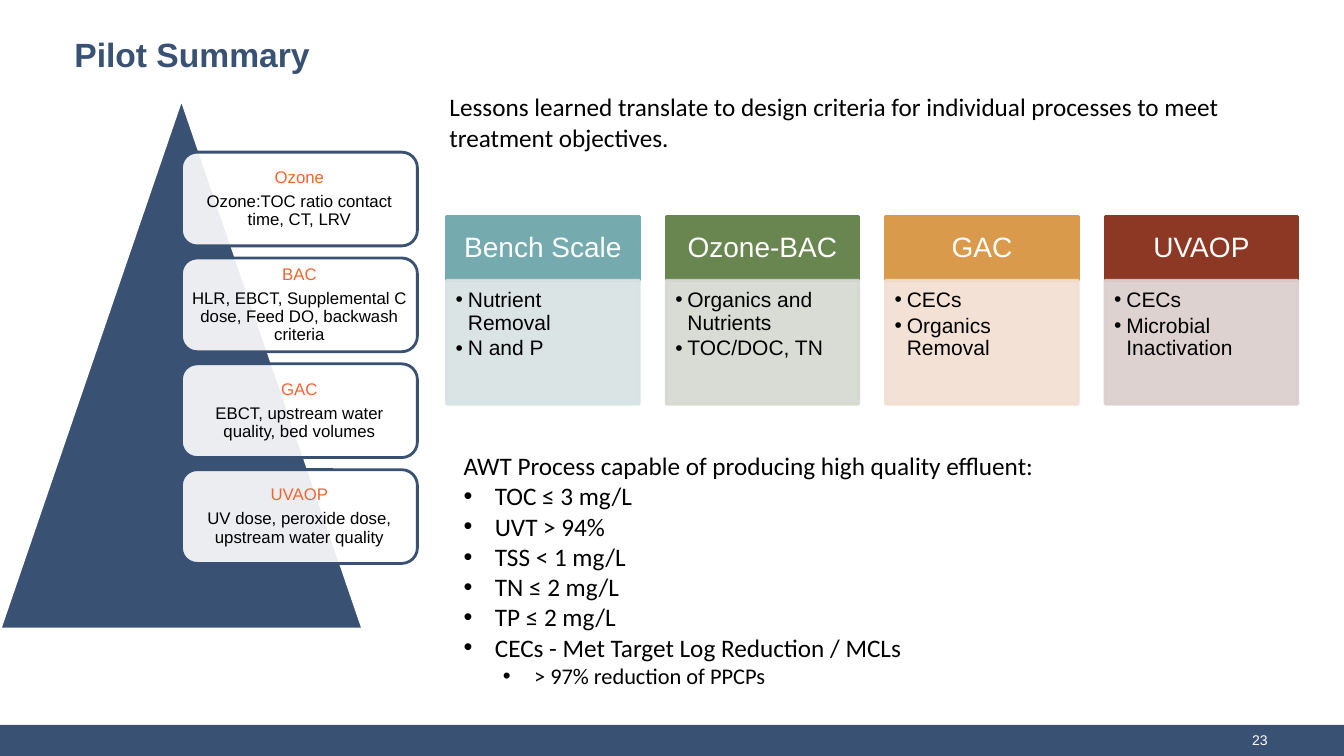
import pptx
import pptx.dml.color
import pptx.enum.shapes
import pptx.enum.text
import pptx.oxml.ns
import pptx.util
from lxml import etree

Inches = pptx.util.Inches
Pt = pptx.util.Pt
RGBColor = pptx.dml.color.RGBColor
Shape = pptx.enum.shapes.MSO_SHAPE
Align = pptx.enum.text.PP_ALIGN
Anchor = pptx.enum.text.MSO_ANCHOR
qn = pptx.oxml.ns.qn

NAVY = RGBColor(0x39, 0x51, 0x73)
ORANGE = RGBColor(0xF2, 0x65, 0x31)
WHITE = RGBColor(0xFF, 0xFF, 0xFF)
BLACK = RGBColor(0x00, 0x00, 0x00)
TEAL = RGBColor(0x75, 0xAA, 0xAF)
PALE_TEAL = RGBColor(0xD6, 0xE2, 0xE3)
GREEN = RGBColor(0x69, 0x86, 0x51)
PALE_GREEN = RGBColor(0xD4, 0xD9, 0xD0)
AMBER = RGBColor(0xD9, 0x9A, 0x4B)
PALE_AMBER = RGBColor(0xF1, 0xDE, 0xD0)
BRICK = RGBColor(0x8D, 0x38, 0x24)
PALE_BRICK = RGBColor(0xDB, 0xCE, 0xCD)

PYRAMID_STEPS = [
    ("Ozone", "Ozone:TOC ratio contact time, CT, LRV"),
    ("BAC", "HLR, EBCT, Supplemental C dose, Feed DO, backwash criteria"),
    ("GAC", "EBCT, upstream water quality, bed volumes"),
    ("UVAOP", "UV dose, peroxide dose, upstream water quality"),
]
PROCESSES = [
    ("Bench Scale", ["Nutrient Removal", "N and P"], TEAL, PALE_TEAL),
    ("Ozone-BAC", ["Organics and Nutrients", "TOC/DOC, TN"], GREEN, PALE_GREEN),
    ("GAC", ["CECs", "Organics Removal"], AMBER, PALE_AMBER),
    ("UVAOP", ["CECs", "Microbial Inactivation"], BRICK, PALE_BRICK),
]
EFFLUENT_RESULTS = [
    "TOC ≤ 3 mg/L",
    "UVT > 94%",
    "TSS < 1 mg/L",
    "TN ≤ 2 mg/L",
    "TP ≤ 2 mg/L",
    "CECs - Met Target Log Reduction / MCLs",
]


def add_bullet(para, margin, hanging):
    properties = para._p.get_or_add_pPr()
    properties.set("marL", str(Inches(margin)))
    properties.set("indent", str(-Inches(hanging)))
    etree.SubElement(properties, qn("a:buFont"), typeface="Arial")
    etree.SubElement(properties, qn("a:buChar"), char="•")


def write_text(frame, text, size, color=BLACK, font="Arial", bold=False,
               align=Align.LEFT, line_spacing=None, space_after=0,
               bullet=None, level=0):
    """Add a paragraph, using the frame's first one while it is still empty."""
    first = frame.paragraphs[0]
    para = frame.add_paragraph() if first.runs else first
    para.alignment = align
    para.level = level
    para.space_after = Pt(space_after)
    if line_spacing:
        para.line_spacing = line_spacing
    if bullet:
        add_bullet(para, *bullet)
    span = para.add_run()
    span.text = text
    span.font.size = Pt(size)
    span.font.name = font
    span.font.bold = bold
    span.font.color.rgb = color


def format_frame(frame, anchor, insets):
    frame.word_wrap = True
    frame.vertical_anchor = anchor
    (frame.margin_left, frame.margin_top,
     frame.margin_right, frame.margin_bottom) = map(Inches, insets)


def add_text_box(page, left, top, width, height, anchor=Anchor.TOP):
    box = page.shapes.add_textbox(*map(Inches, (left, top, width, height)))
    format_frame(box.text_frame, anchor, (0.1, 0.05, 0.1, 0.05))
    return box.text_frame


def add_panel(page, kind, left, top, width, height, fill, line=None,
              anchor=Anchor.MIDDLE, insets=(0.05, 0.05, 0.05, 0.05)):
    panel = page.shapes.add_shape(kind, *map(Inches, (left, top, width, height)))
    panel.shadow.inherit = False
    panel.fill.solid()
    panel.fill.fore_color.rgb = fill
    if line is None:
        panel.line.fill.background()
    else:
        panel.line.color.rgb = line
        panel.line.width = Pt(2)
    format_frame(panel.text_frame, anchor, insets)
    return panel


def set_opacity(color_parent, percent):
    for color in color_parent.iter(qn("a:srgbClr")):
        etree.SubElement(color, qn("a:alpha"), val=str(percent * 1000))


def add_pyramid(page):
    add_panel(page, Shape.ISOSCELES_TRIANGLE, 0, 0.98, 3.6, 5.26, NAVY, WHITE)
    for index, (name, criteria) in enumerate(PYRAMID_STEPS):
        step = add_panel(page, Shape.ROUNDED_RECTANGLE, 1.8, 1.51 + 1.05 * index,
                         2.34, 0.93, WHITE, NAVY)
        set_opacity(step._element.spPr.find(qn("a:solidFill")), 90)
        for text, color in ((name, ORANGE), (criteria, BLACK)):
            write_text(step.text_frame, text, 12, color, align=Align.CENTER,
                       line_spacing=0.9, space_after=4.2)


def add_process_cards(page):
    for index, (name, targets, color, pale) in enumerate(PROCESSES):
        left = 4.43 + 2.177 * index
        header = add_panel(page, Shape.RECTANGLE, left, 2.15, 1.91, 0.63, color,
                           color, insets=(0.16, 0.09, 0.16, 0.09))
        write_text(header.text_frame, name, 20, WHITE, align=Align.CENTER,
                   line_spacing=0.9, space_after=7)
        body = add_panel(page, Shape.RECTANGLE, left, 2.78, 1.91, 1.23, pale, pale,
                         anchor=Anchor.TOP, insets=(0.09, 0.09, 0.12, 0.13))
        set_opacity(body._element.spPr, 90)
        for target in targets:
            write_text(body.text_frame, target, 15, line_spacing=0.9,
                       space_after=2.25, bullet=(0.12, 0.12), level=1)


def add_effluent_list(page):
    frame = add_text_box(page, 4.5, 4.42, 8.44, 2.52)
    write_text(frame, "AWT Process capable of producing high quality effluent:",
               18, font="Calibri")
    for result in EFFLUENT_RESULTS:
        write_text(frame, result, 18, font="Calibri", bullet=(0.31, 0.31))
    write_text(frame, "> 97% reduction of PPCPs", 16, font="Calibri",
               bullet=(0.7, 0.31), level=1)


def main():
    deck = pptx.Presentation()
    deck.slide_width = Inches(13.33)
    deck.slide_height = Inches(7.5)
    page = deck.slides.add_slide(deck.slide_layouts[6])

    add_panel(page, Shape.RECTANGLE, 0, 7.19, 13.33, 0.31, NAVY)
    number = add_text_box(page, 9.67, 7.2, 3, 0.29, Anchor.MIDDLE)
    write_text(number, "23", 10, WHITE, align=Align.RIGHT)
    title = add_text_box(page, 0.64, 0.27, 2.57, 0.58, Anchor.MIDDLE)
    write_text(title, "Pilot Summary", 24, NAVY, bold=True, line_spacing=0.9)

    add_pyramid(page)
    add_process_cards(page)
    lessons = add_text_box(page, 4.36, 0.86, 8.44, 1.01)
    write_text(lessons, "Lessons learned translate to design criteria for "
               "individual processes to meet treatment objectives.",
               18, font="Calibri")
    add_effluent_list(page)
    deck.save("out.pptx")


if __name__ == "__main__":
    main()
